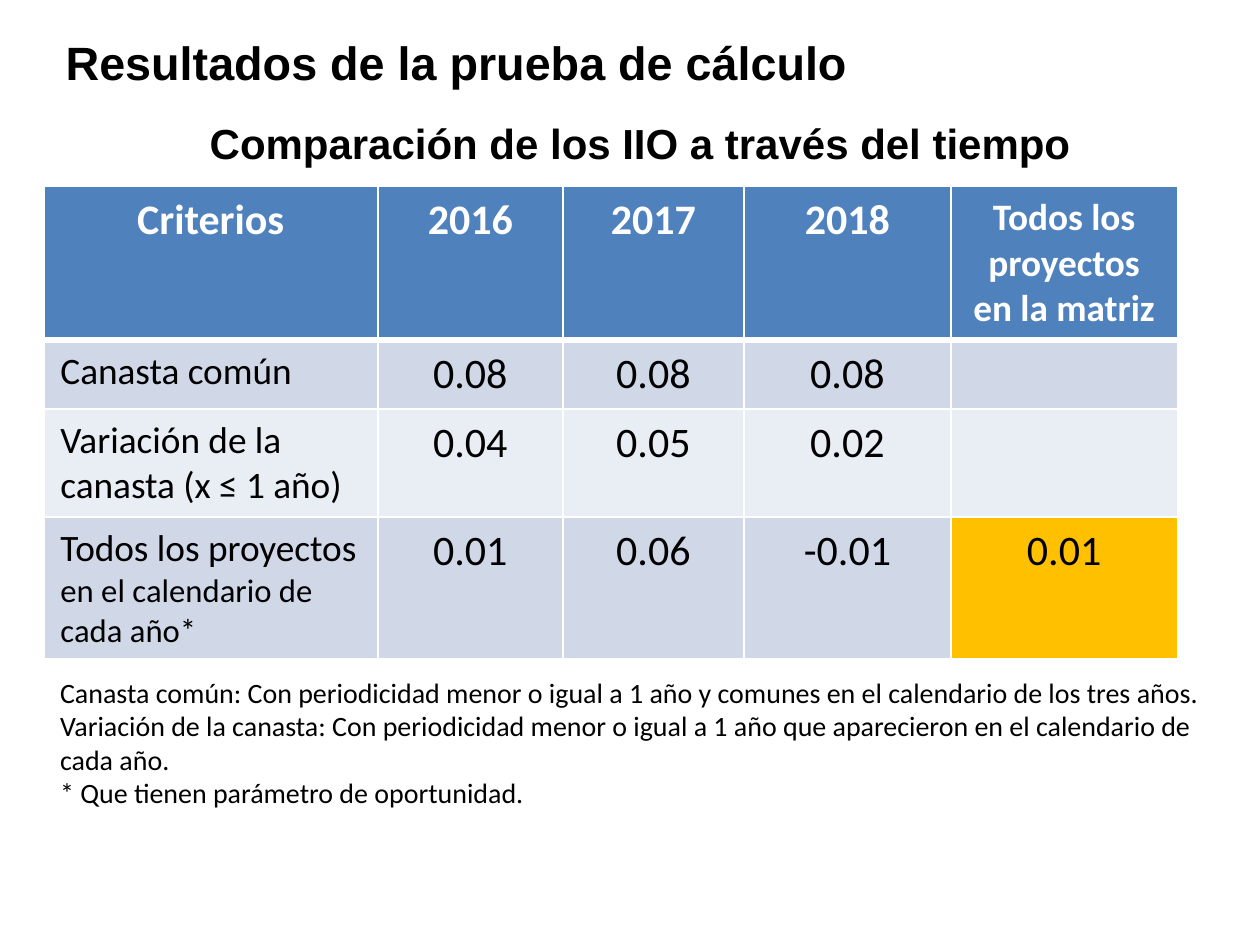
"""Build the slide comparing the IIO results over time."""
from lxml import etree
from pptx import Presentation
from pptx.dml.color import RGBColor
from pptx.enum.text import MSO_ANCHOR, PP_ALIGN
from pptx.oxml.ns import qn
from pptx.util import Inches, Pt

LEFT, CENTER = PP_ALIGN.LEFT, PP_ALIGN.CENTER
MIDDLE = MSO_ANCHOR.MIDDLE
BLACK = RGBColor(0x00, 0x00, 0x00)
WHITE = RGBColor(0xFF, 0xFF, 0xFF)
BLUE = RGBColor(0x4F, 0x81, 0xBD)
BAND_DARK = RGBColor(0xD0, 0xD8, 0xE8)
BAND_LIGHT = RGBColor(0xE9, 0xED, 0xF4)
AMBER = RGBColor(0xFF, 0xC0, 0x00)

COLUMN_WIDTHS = [1.99, 1.1, 1.08, 1.23, 1.35]
ROW_HEIGHTS = [0.91, 0.41, 0.64, 0.84]
ROW_FILLS = [BLUE, BAND_DARK, BAND_LIGHT, BAND_DARK]
ROWS = [
    ["Criterios", "2016", "2017", "2018", "Todos los proyectos en la matriz"],
    ["Canasta común", "0.08", "0.08", "0.08", ""],
    ["Variación de la canasta (x ≤ 1 año)", "0.04", "0.05", "0.02", ""],
    ["Todos los proyectos ", "0.01", "0.06", "-0.01", "0.01"],
]
NOTES = [
    "Canasta común: Con periodicidad menor o igual a 1 año y comunes en el calendario de los tres años.",
    "Variación de la canasta: Con periodicidad menor o igual a 1 año que aparecieron en el calendario de cada año.",
    "* Que tienen parámetro de oportunidad.",
]


def style_span(span, size, name, color=BLACK, bold=False):
    span.font.size = Pt(size)
    span.font.name = name
    span.font.color.rgb = color
    span.font.bold = bold


def add_borders(cell, bottom_width):
    properties = cell._tc.get_or_add_tcPr()
    widths = {"a:lnL": 1, "a:lnR": 1, "a:lnT": 1, "a:lnB": bottom_width}
    for position, (tag, width) in enumerate(widths.items()):
        line = etree.Element(qn(tag), w=str(Pt(width)))
        fill = etree.SubElement(line, qn("a:solidFill"))
        etree.SubElement(fill, qn("a:srgbClr"), val=str(WHITE))
        properties.insert(position, line)


deck = Presentation()
deck.slide_width = Inches(7.5)
deck.slide_height = Inches(7.5 * 3 / 4)
page = deck.slides.add_slide(deck.slide_layouts[5])

title = page.shapes.title
title.left, title.top = Inches(0.29), Inches(0.06)
title.width, title.height = Inches(6.75), Inches(0.62)
title.text_frame.text = "Resultados de la prueba de cálculo"
title.text_frame.vertical_anchor = MIDDLE
title.text_frame.paragraphs[0].alignment = LEFT
style_span(title.text_frame.paragraphs[0].runs[0], 20, "Arial", bold=True)

table = page.shapes.add_table(
    len(ROWS), len(COLUMN_WIDTHS), Inches(0.26), Inches(1.11),
    Inches(sum(COLUMN_WIDTHS)), Inches(sum(ROW_HEIGHTS))).table
for column, width in zip(table.columns, COLUMN_WIDTHS):
    column.width = Inches(width)
for row_index, texts in enumerate(ROWS):
    table.rows[row_index].height = Inches(ROW_HEIGHTS[row_index])
    header = row_index == 0
    for column_index, text in enumerate(texts):
        cell = table.cell(row_index, column_index)
        cell.fill.solid()
        cell.fill.fore_color.rgb = ROW_FILLS[row_index]
        add_borders(cell, 3 if header else 1)
        para = cell.text_frame.paragraphs[0]
        para.text = text
        label = column_index == 0 and not header
        para.alignment = LEFT if label else CENTER
        small = label or (header and column_index == 4)
        for span in para.runs:
            style_span(span, 16 if small else 18, "Calibri",
                       WHITE if header else BLACK, header)

detail = table.cell(3, 0).text_frame.paragraphs[0].add_run()
detail.text = "en el calendario de cada año*"
style_span(detail, 14, "Calibri")
table.cell(3, 4).fill.fore_color.rgb = AMBER

subtitle_box = page.shapes.add_textbox(Inches(1.15), Inches(0.65), Inches(5.51), Inches(0.4))
subtitle_box.text_frame.word_wrap = True
subtitle_box.text_frame.text = "Comparación de los IIO a través del tiempo"
style_span(subtitle_box.text_frame.paragraphs[0].runs[0], 18, "Arial", bold=True)

notes_box = page.shapes.add_textbox(Inches(0.26), Inches(3.97), Inches(7.03), Inches(1.11))
notes_box.text_frame.word_wrap = True
notes_box.text_frame.text = "\n".join(NOTES)
for para in notes_box.text_frame.paragraphs:
    style_span(para.runs[0], 12, "Calibri")

deck.save("out.pptx")
